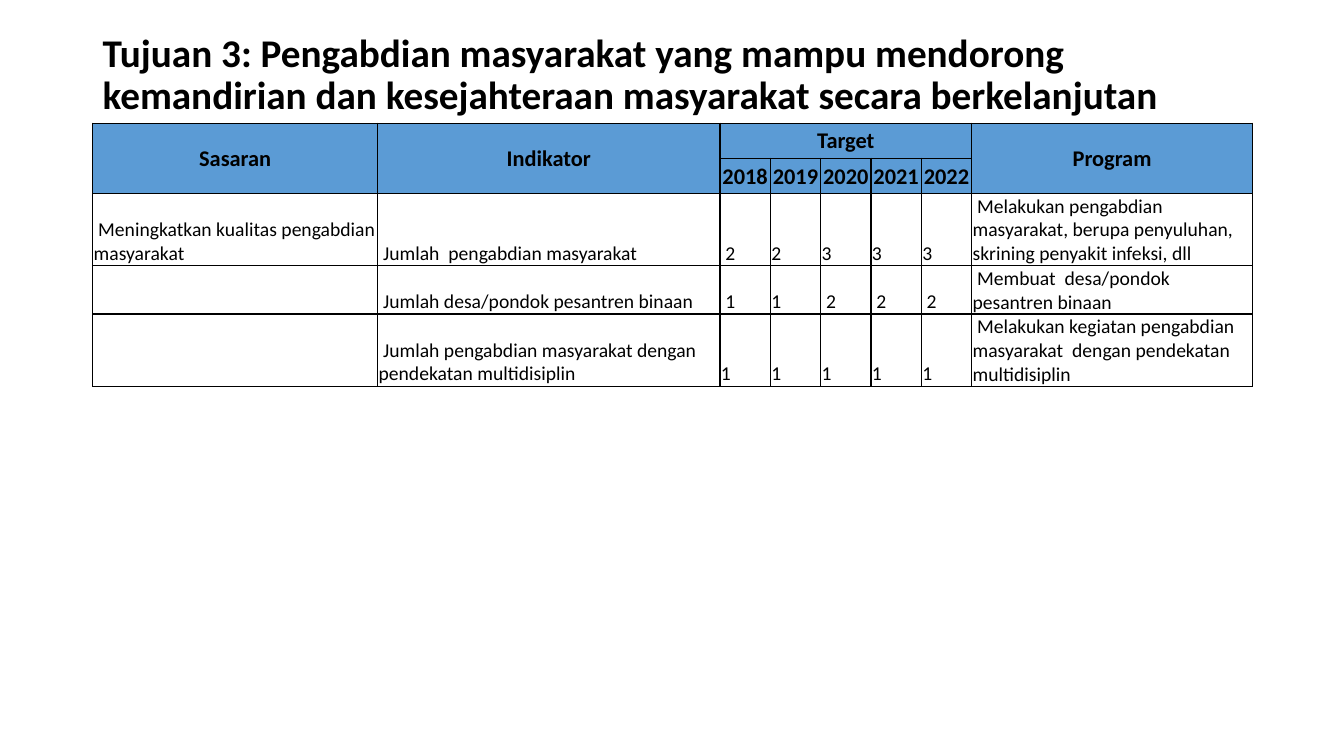
from dataclasses import dataclass

from lxml.etree import SubElement
from pptx import Presentation
from pptx.dml.color import RGBColor as Rgb
from pptx.enum.text import MSO_ANCHOR as Anchor, PP_ALIGN as Align
from pptx.oxml.ns import qn
from pptx.util import Inches, Pt


@dataclass(frozen=True)
class Theme:
    font: str = "Calibri"
    ink: Rgb = Rgb(0, 0, 0)
    head: Rgb = Rgb(0x5B, 0x9B, 0xD5)
    title: int = 28
    label: int = 16
    body: int = 14
    rule: int = 1
    inset: float = 0.01


THEME = Theme()
WIDE, HIGH = Inches(13.33), Inches(7.5)

TITLE = ("Tujuan 3: Pengabdian masyarakat yang mampu mendorong "
         "kemandirian dan kesejahteraan masyarakat secara berkelanjutan")

# Relative column widths and row heights
COLS = [2.83, 3.4] + [0.5] * 5 + [2.79]
ROWS = [0.35, 0.35, 0.72, 0.48, 0.72]
HEADS = 2

# Header merges: first cell, last cell
SPANS = [((0, 0), (1, 0)), ((0, 1), (1, 1)), ((0, 2), (0, 6)), ((0, 7), (1, 7))]

DATA = [
    ["Sasaran", "Indikator", "Target", "", "", "", "", "Program"],
    ["", "", "2018", "2019", "2020", "2021", "2022", ""],
    [" Meningkatkan kualitas pengabdian masyarakat",
     " Jumlah  pengabdian masyarakat", " 2", "2", "3", "3", "3",
     " Melakukan pengabdian masyarakat, berupa penyuluhan, "
     "skrining penyakit infeksi, dll"],
    ["", " Jumlah desa/pondok pesantren binaan", " 1", "1", " 2", " 2", " 2",
     " Membuat  desa/pondok pesantren binaan"],
    ["", " Jumlah pengabdian masyarakat dengan pendekatan multidisiplin",
     "1", "1", "1", "1", "1",
     " Melakukan kegiatan pengabdian masyarakat  dengan pendekatan "
     "multidisiplin"],
]


def share(x, y, w, h):
    """Turn shares of the slide into a box."""
    return int(WIDE * x), int(HIGH * y), int(WIDE * w), int(HIGH * h)


def style(para, size, bold):
    font = para.font
    font.name, font.size, font.bold = THEME.font, Pt(size), bold
    font.color.rgb = THEME.ink


def edge(cell):
    """Draw all four borders; they must come before the fill."""
    props = cell._tc.get_or_add_tcPr()
    for side in ("lnL", "lnR", "lnT", "lnB"):
        line = SubElement(props, qn(f"a:{side}"), w=str(Pt(THEME.rule)))
        fill = SubElement(line, qn("a:solidFill"))
        SubElement(fill, qn("a:srgbClr"), val=str(THEME.ink))


def fill_cell(cell, text, head):
    edge(cell)
    cell.margin_left = cell.margin_right = Inches(THEME.inset)
    cell.margin_top, cell.margin_bottom = Inches(THEME.inset), 0
    cell.vertical_anchor = Anchor.MIDDLE if head else Anchor.BOTTOM
    if head:
        cell.fill.solid()
        cell.fill.fore_color.rgb = THEME.head
    else:
        cell.fill.background()
    cell.text = text
    para = cell.text_frame.paragraphs[0]
    para.alignment = Align.CENTER if head else Align.LEFT
    style(para, THEME.label if head else THEME.body, head)


def add_title(slide, box):
    frame = slide.shapes.add_textbox(*box).text_frame
    frame.word_wrap = True
    frame.vertical_anchor = Anchor.MIDDLE
    para = frame.paragraphs[0]
    para.text = TITLE
    para.line_spacing = 0.9
    style(para, THEME.title, True)


def add_plan(slide, box):
    table = slide.shapes.add_table(len(ROWS), len(COLS), *box).table
    table.first_row = table.horz_banding = False
    for col, part in zip(table.columns, COLS):
        col.width = int(box[2] * part / sum(COLS))
    for row, part in zip(table.rows, ROWS):
        row.height = int(box[3] * part / sum(ROWS))
    for r, line in enumerate(DATA):
        for c, text in enumerate(line):
            fill_cell(table.cell(r, c), text, r < HEADS)
    for first, last in SPANS:
        table.cell(*first).merge(table.cell(*last))


def main():
    deck = Presentation()
    deck.slide_width, deck.slide_height = WIDE, HIGH
    slide = deck.slides.add_slide(deck.slide_layouts[6])
    add_title(slide, share(0.069, 0.053, 0.863, 0.095))
    add_plan(slide, share(0.069, 0.163, 0.863, 0.348))
    deck.save("out.pptx")


if __name__ == "__main__":
    main()
